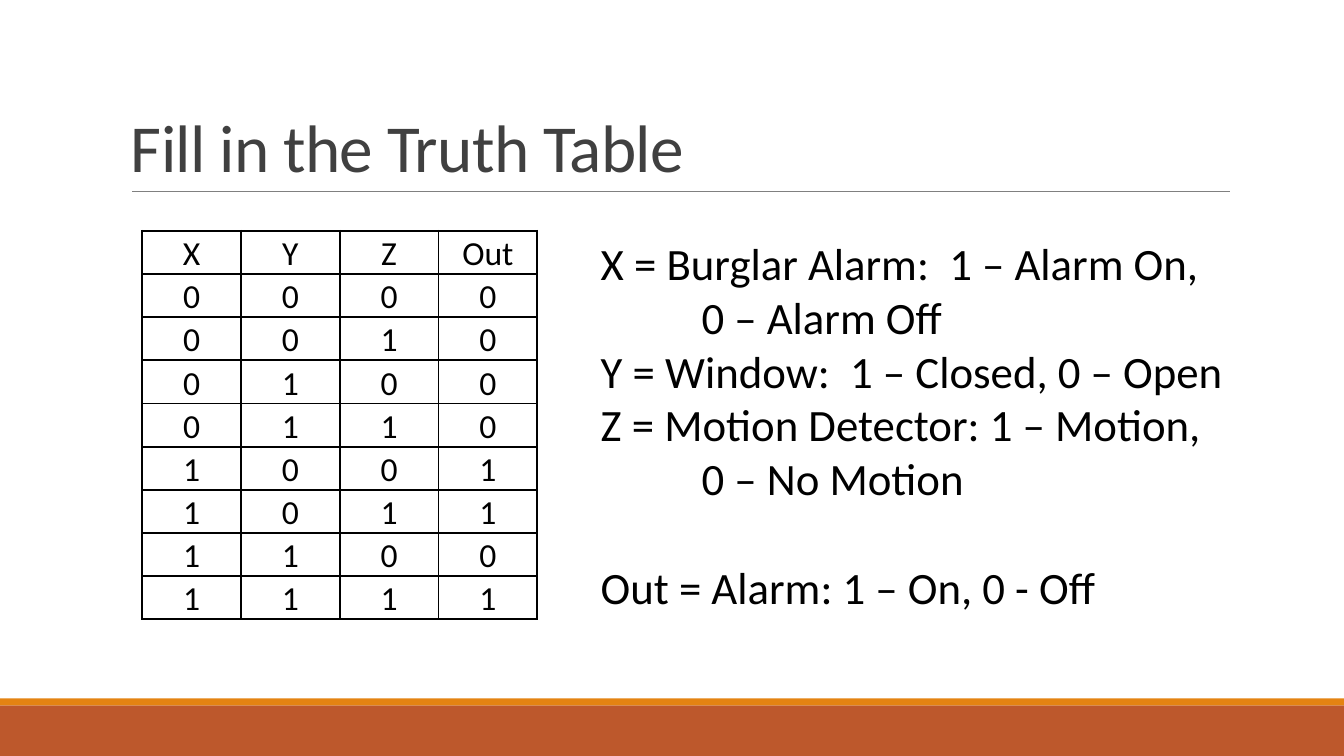
import itertools
from dataclasses import dataclass

import lxml.etree
import pptx
import pptx.dml.color
import pptx.enum.shapes
import pptx.enum.text
import pptx.oxml.ns
import pptx.util

qn = pptx.oxml.ns.qn
Pt = pptx.util.Pt
ANCHOR = pptx.enum.text.MSO_ANCHOR
ALIGN = pptx.enum.text.PP_ALIGN


@dataclass(frozen=True)
class Theme:
    font: str = "Calibri"
    title: str = "404040"
    ink: str = "000000"
    rule: str = "808080"
    band: str = "BD582C"
    stripe: str = "E48312"
    title_pt: int = 48
    body_pt: int = 32
    cell_pt: int = 24


THEME = Theme()
WIDTH, HEIGHT = pptx.util.Inches(13.33), pptx.util.Inches(7.5)
COLUMN, ROW = WIDTH / 100, HEIGHT / 100


def grid(x, y, w, h):
    return round(x * COLUMN), round(y * ROW), round(w * COLUMN), round(h * ROW)


def rgb(color):
    return pptx.dml.color.RGBColor.from_string(color)


def add_text(p, text, size, color=THEME.ink, align=ALIGN.LEFT, line=1.0,
             before=0, indent=0, tracking=0):
    p.alignment = align
    p.line_spacing = line
    p.space_before = Pt(before)
    if indent:
        p._p.get_or_add_pPr().set("marL", str(pptx.util.Inches(indent)))
    r = p.add_run()
    r.text = text
    r.font.name = THEME.font
    r.font.size = Pt(size)
    r.font.color.rgb = rgb(color)
    if tracking:
        r._r.get_or_add_rPr().set("spc", str(round(tracking * 100)))


def text_frame(slide, box, anchor=ANCHOR.TOP):
    tf = slide.shapes.add_textbox(*box).text_frame
    tf.word_wrap = True
    tf.vertical_anchor = anchor
    return tf


def add_bar(slide, box, color):
    sp = slide.shapes.add_shape(pptx.enum.shapes.MSO_SHAPE.RECTANGLE, *box)
    sp.shadow.inherit = False
    sp.fill.solid()
    sp.fill.fore_color.rgb = rgb(color)
    sp.line.fill.background()


def add_footer(slide, box):
    x, y, w, h = box
    stripe = round(h * 0.12)
    add_bar(slide, (x, y + stripe, w, h - stripe), THEME.band)
    add_bar(slide, (x, y, w, stripe), THEME.stripe)


def add_title(slide, box, text):
    x, y, w, h = box
    inset = round(w * 0.01)
    line = slide.shapes.add_connector(
        pptx.enum.shapes.MSO_CONNECTOR.STRAIGHT,
        x + inset, y + h, x + w, y + h)
    line.line.color.rgb = rgb(THEME.rule)
    line.line.width = Pt(0.5)
    lxml.etree.SubElement(line._element.spPr, qn("a:effectLst"))
    tf = text_frame(slide, box, ANCHOR.BOTTOM)
    add_text(tf.paragraphs[0], text, THEME.title_pt, THEME.title,
             line=0.85, tracking=-0.5)


def add_borders(cell):
    tcPr = cell._tc.get_or_add_tcPr()
    for side in ("lnL", "lnR", "lnT", "lnB"):
        ln = lxml.etree.SubElement(tcPr, qn(f"a:{side}"), w=str(Pt(1.5)))
        fill = lxml.etree.SubElement(ln, qn("a:solidFill"))
        lxml.etree.SubElement(fill, qn("a:srgbClr"), val=THEME.ink)


def add_truth_table(slide, box, rows):
    x, y, w, h = box
    table = slide.shapes.add_table(len(rows), len(rows[0]), *box).table
    table.first_row = False
    table.horz_banding = False
    for column in table.columns:
        column.width = round(w / len(rows[0]))
    for row, values in zip(table.rows, rows):
        row.height = round(h / len(rows))
        for cell, value in zip(row.cells, values):
            cell.margin_left = cell.margin_right = pptx.util.Inches(0.07)
            cell.margin_top = cell.margin_bottom = 0
            cell.vertical_anchor = ANCHOR.MIDDLE
            add_borders(cell)
            cell.fill.background()
            add_text(cell.text_frame.paragraphs[0], str(value), THEME.cell_pt,
                     align=ALIGN.CENTER, line=1.07)


def add_legend(slide, box, entries):
    tf = text_frame(slide, box)
    for i, (text, layout) in enumerate(entries):
        p = tf.add_paragraph() if i else tf.paragraphs[0]
        add_text(p, text, THEME.body_pt, **layout)


def alarm_rows():
    inputs = itertools.product((0, 1), repeat=3)
    return [("X", "Y", "Z", "Out")] + [
        (x, y, z, int(x and (not y or z))) for x, y, z in inputs]


def main():
    prs = pptx.Presentation()
    prs.slide_width, prs.slide_height = WIDTH, HEIGHT
    slide = prs.slides.add_slide(prs.slide_layouts[6])
    add_footer(slide, grid(0, 92.4, 100, 7.6))
    add_title(slide, grid(9, 4.13, 82.5, 21.2), "Fill in the Truth Table")
    add_truth_table(slide, grid(10.58, 30.53, 29.4, 49.07), alarm_rows())
    add_legend(slide, grid(43.96, 30.53, 50, 51.6), [
        ("X = Burglar Alarm:  1 – Alarm On,", {}),
        ("0 – Alarm Off", {"indent": 1}),
        ("Y = Window:  1 – Closed, 0 – Open", {}),
        ("Z = Motion Detector: 1 – Motion,", {}),
        ("0 – No Motion", {"indent": 1}),
        ("Out = Alarm: 1 – On, 0 - Off", {"before": 39}),
    ])
    prs.save("out.pptx")


if __name__ == "__main__":
    main()
